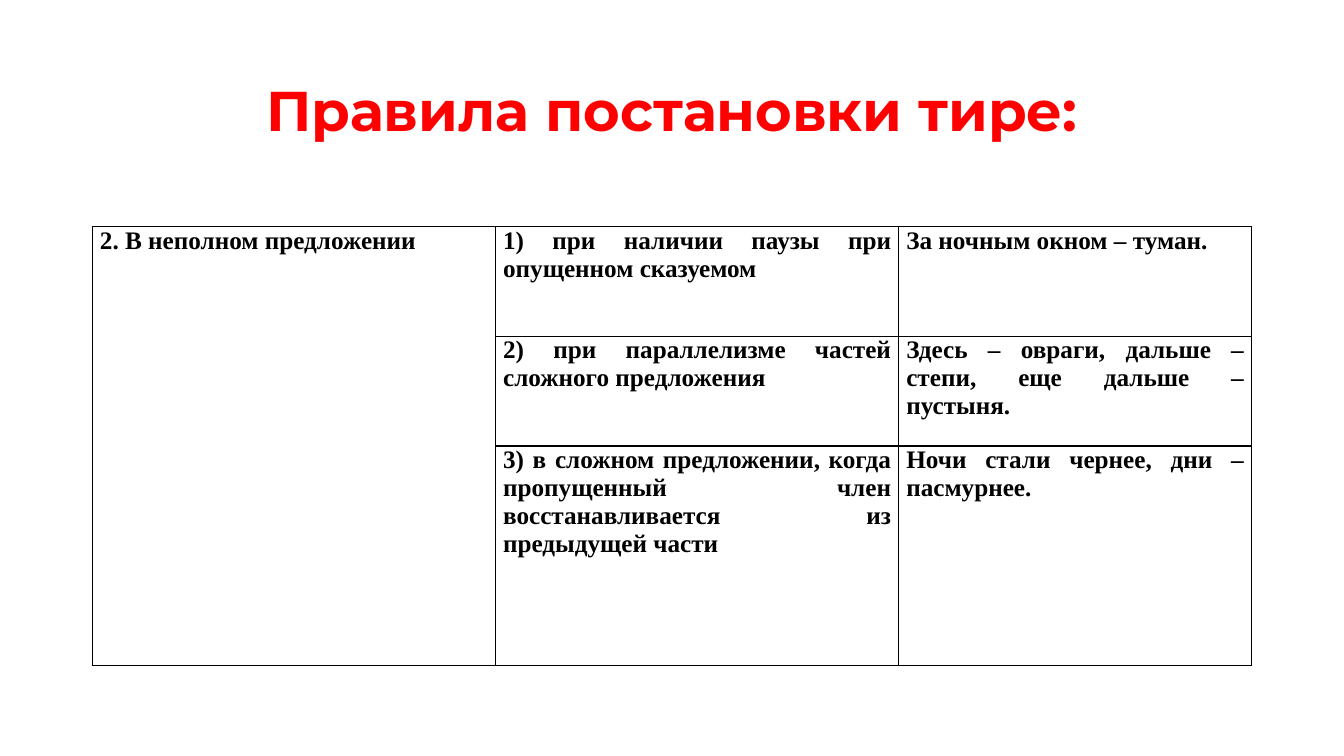
"""Build a slide with a table of rules for placing a dash."""
from dataclasses import dataclass

from lxml import etree
from pptx import Presentation
from pptx.dml.color import RGBColor
from pptx.enum import text
from pptx.oxml import ns
from pptx.util import Pt


@dataclass(frozen=True)
class Theme:
    """Colours, fonts and sizes of the slide."""
    title_color: str = "FF0000"
    ink: str = "000000"
    paper: str = "FFFFFF"
    title_font: str = "Montserrat"
    body_font: str = "Times New Roman"
    title_size: float = 40
    body_size: float = 18
    border: float = 1


@dataclass(frozen=True)
class Rule:
    """One rule with its example and row height."""
    wording: str
    example: str
    height: float


THEME = Theme()
LEFT, WIDTH = 66, 828
COLUMNS = (288, 288, 252)
TOPIC = "2. В неполном предложении"
RULES = (
    Rule("1) при наличии паузы при опущенном сказуемом",
         "За ночным окном – туман.", 78.3),
    Rule("2) при параллелизме частей сложного предложения",
         "Здесь – овраги, дальше – степи, еще дальше – пустыня.", 78.3),
    Rule("3) в сложном предложении, когда пропущенный член "
         "восстанавливается из предыдущей части",
         "Ночи стали чернее, дни – пасмурнее.", 156.6),
)


def write(frame, wording: str, *, font: str, size: float, color: str,
          align, spacing: float = 1.0) -> None:
    """Write one bold paragraph into a text frame."""
    frame.word_wrap = True
    para = frame.paragraphs[0]
    para.alignment = align
    para.line_spacing = spacing
    span = para.add_run()
    span.text = wording
    span.font.name = font
    span.font.size = Pt(size)
    span.font.bold = True
    span.font.color.rgb = RGBColor.from_string(color)


def style_cell(cell) -> None:
    """Give a cell its margins, plain fill and four borders."""
    cell.margin_left = cell.margin_right = Pt(5.4)
    cell.margin_top = cell.margin_bottom = Pt(0)
    cell.vertical_anchor = text.MSO_ANCHOR.TOP
    cell.fill.background()
    properties = cell._tc.get_or_add_tcPr()
    for index, side in enumerate(("lnL", "lnR", "lnT", "lnB")):
        line = etree.Element(ns.qn(f"a:{side}"), w=str(Pt(THEME.border)))
        fill = etree.SubElement(line, ns.qn("a:solidFill"))
        etree.SubElement(fill, ns.qn("a:srgbClr"), val=THEME.ink)
        properties.insert(index, line)


def add_title(page) -> None:
    """Place and fill the title placeholder."""
    title = page.shapes.title
    title.left, title.top = Pt(LEFT), Pt(28.8)
    title.width, title.height = Pt(WIDTH), Pt(104.4)
    title.text_frame.vertical_anchor = text.MSO_ANCHOR.MIDDLE
    write(title.text_frame, "Правила постановки тире:", font=THEME.title_font,
          size=THEME.title_size, color=THEME.title_color,
          align=text.PP_ALIGN.CENTER, spacing=0.9)


def add_rules(page) -> None:
    """Add the table with the topic cell merged down the first column."""
    height = sum(rule.height for rule in RULES)
    table = page.shapes.add_table(len(RULES), len(COLUMNS), Pt(LEFT), Pt(162),
                                  Pt(WIDTH), Pt(height)).table
    table.first_row = table.horz_banding = False
    for column, width in zip(table.columns, COLUMNS):
        column.width = Pt(width)
    for row, rule in zip(table.rows, RULES):
        row.height = Pt(rule.height)
    table.cell(0, 0).merge(table.cell(len(RULES) - 1, 0))
    for row, rule in zip(table.rows, RULES):
        for cell, wording in zip(row.cells, (TOPIC, rule.wording, rule.example)):
            style_cell(cell)
            if not cell.is_spanned:
                write(cell.text_frame, wording, font=THEME.body_font,
                      size=THEME.body_size, color=THEME.ink,
                      align=text.PP_ALIGN.JUSTIFY)


def main() -> None:
    """Build and save the deck."""
    deck = Presentation()
    deck.slide_width, deck.slide_height = Pt(960), Pt(540)
    page = deck.slides.add_slide(deck.slide_layouts[5])
    page.background.fill.solid()
    page.background.fill.fore_color.rgb = RGBColor.from_string(THEME.paper)
    add_title(page)
    add_rules(page)
    deck.save("out.pptx")


if __name__ == "__main__":
    main()
